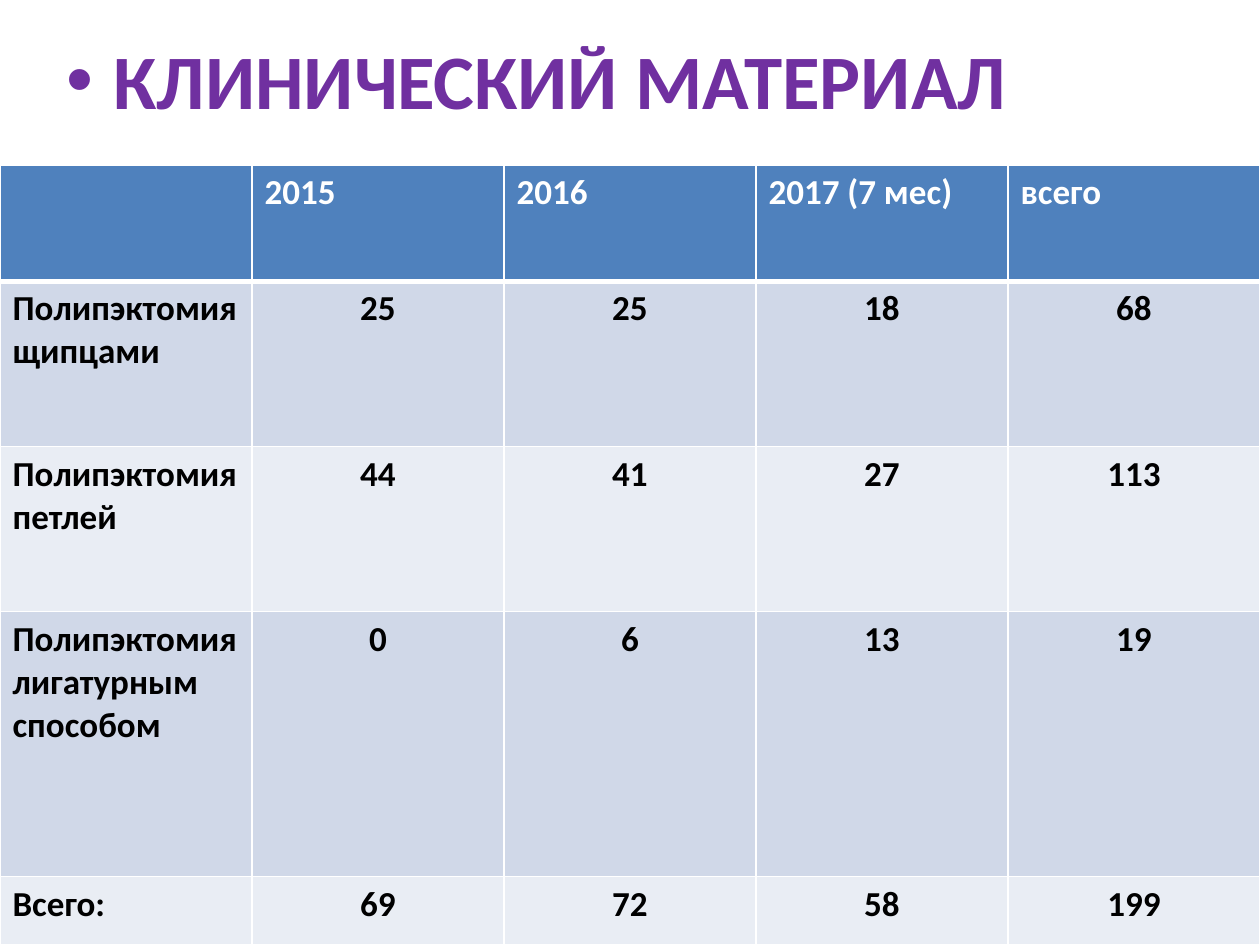
import pptx
import pptx.dml.color
import pptx.enum.text
import pptx.oxml.ns
import pptx.util
from lxml import etree

Cm, Pt = pptx.util.Cm, pptx.util.Pt
CENTER = pptx.enum.text.PP_ALIGN.CENTER


def color(value):
    return pptx.dml.color.RGBColor.from_string(value)


def add_xml(parent, tag, **attrs):
    return etree.SubElement(parent, pptx.oxml.ns.qn(tag), attrs)


class Deck:
    font = "Calibri"
    title_color, header_fill = "7030A0", "4F81BD"
    bands = ("D0D8E8", "E9EDF4")
    white, black = "FFFFFF", "000000"

    def __init__(self):
        self.prs = pptx.Presentation()
        self.prs.slide_width, self.prs.slide_height = Cm(25.4), Cm(19.05)
        self.s = self.prs.slides.add_slide(self.prs.slide_layouts[6])

    def style(self, p, size, value):
        p.font.name, p.font.size, p.font.bold = self.font, Pt(size), True
        p.font.color.rgb = color(value)

    def bullet_title(self, text, left, top, width, height):
        tf = self.s.shapes.add_textbox(Cm(left), Cm(top), Cm(width), Cm(height)).text_frame
        tf.word_wrap = True
        p = tf.paragraphs[0]
        p.text = text
        pPr = p._p.get_or_add_pPr()
        indent = Cm(0.95)
        pPr.set("marL", str(indent))
        pPr.set("indent", str(-indent))
        add_xml(add_xml(pPr, "a:spcBef"), "a:spcPct", val="20000")
        add_xml(pPr, "a:buFont", typeface="Arial")
        add_xml(pPr, "a:buChar", char="•")
        self.style(p, 44, self.title_color)

    def borders(self, cell, bottom, top):
        """Draw white cell edges; the top and bottom widths are in points."""
        tcPr = cell._tc.get_or_add_tcPr()
        for side, width in zip("LRTB", (1, 1, top, bottom)):
            ln = add_xml(tcPr, "a:ln" + side, w=str(Pt(width)))
            add_xml(add_xml(ln, "a:solidFill"), "a:srgbClr", val=self.white)

    def table(self, rows, left, top, col_width, heights):
        cols = len(rows[0])
        table = self.s.shapes.add_table(
            len(rows), cols, Cm(left), Cm(top), Cm(col_width * cols), Cm(sum(heights))
        ).table
        for col in table.columns:
            col.width = Cm(col_width)
        for i, (values, height) in enumerate(zip(rows, heights)):
            table.rows[i].height = Cm(height)
            header = i == 0
            fill = self.header_fill if header else self.bands[(i - 1) % 2]
            for j, value in enumerate(values):
                cell = table.cell(i, j)
                self.borders(cell, bottom=3 if header else 1, top=3 if i == 1 else 1)
                cell.fill.solid()
                cell.fill.fore_color.rgb = color(fill)
                cell.text = value
                p = cell.text_frame.paragraphs[0]
                self.style(p, 20, self.white if header else self.black)
                if not header and j > 0:
                    p.alignment = CENTER


def main():
    deck = Deck()
    deck.bullet_title("КЛИНИЧЕСКИЙ МАТЕРИАЛ", 1.09, 0.53, 22.86, 2.6)
    rows = [
        ("", "2015", "2016", "2017 (7 мес)", "всего"),
        ("Полипэктомия щипцами", "25", "25", "18", "68"),
        ("Полипэктомия петлей", "44", "41", "27", "113"),
        ("Полипэктомия лигатурным способом", "0", "6", "13", "19"),
        ("Всего:", "69", "72", "58", "199"),
    ]
    deck.table(rows, 0, 3.33, 5.08, (2.34, 3.33, 3.33, 5.34, 1.37))
    deck.prs.save("out.pptx")


if __name__ == "__main__":
    main()
